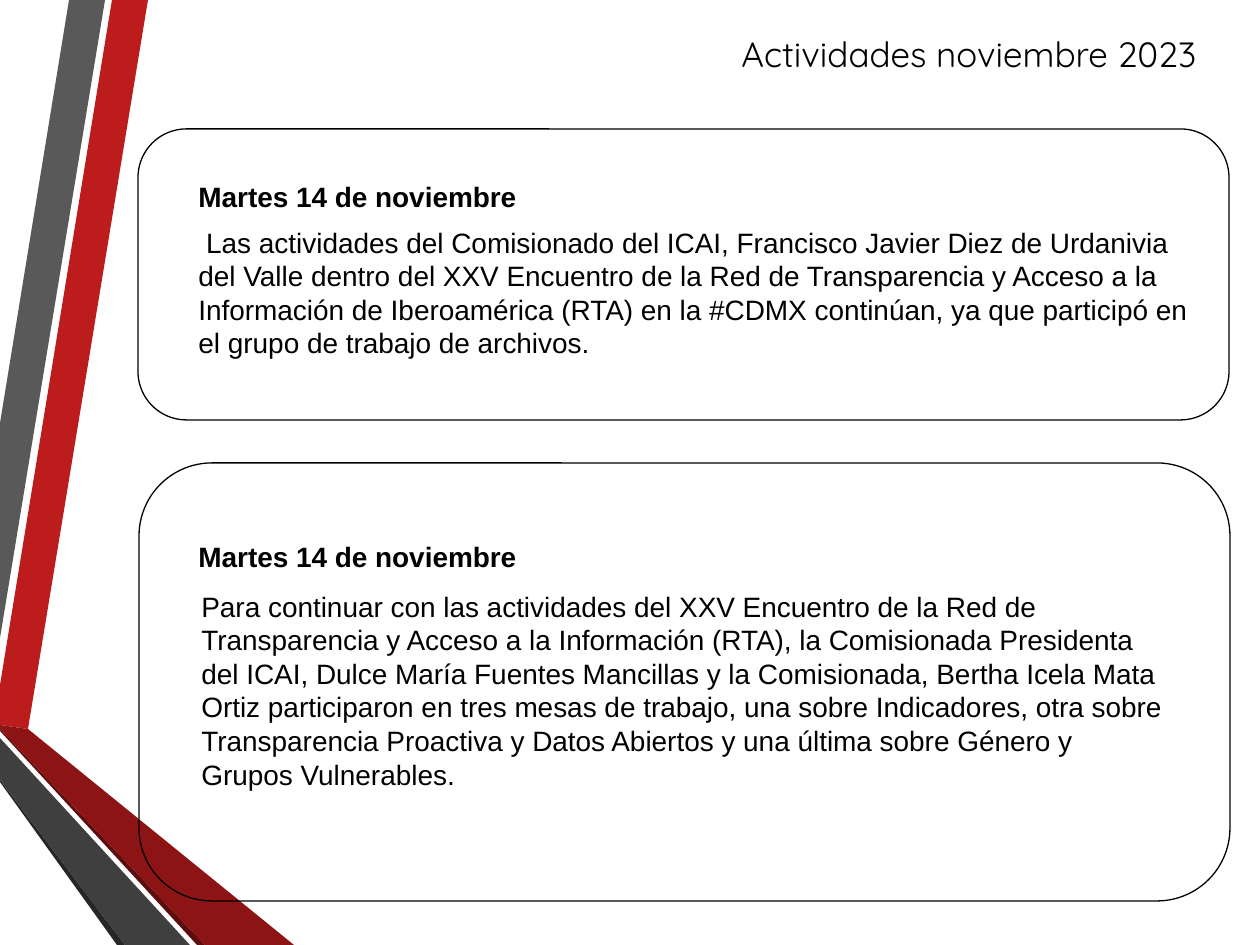
import pptx
import pptx.util
import pptx.dml.color
import pptx.enum.shapes
import pptx.enum.text

RGBColor = pptx.dml.color.RGBColor
BLACK = RGBColor(0x00, 0x00, 0x00)
RED = RGBColor(0xBC, 0x1C, 0x1C)
DARK_RED = RGBColor(0x8D, 0x14, 0x15)
MAROON = RGBColor(0x5E, 0x0D, 0x0E)
GREY = RGBColor(0x59, 0x59, 0x59)
DARK_GREY = RGBColor(0x3F, 0x3F, 0x3F)
CHARCOAL = RGBColor(0x26, 0x26, 0x26)

EMU_PER_PX = 914400 / 126

# Ribbon outlines, from back to front
RIBBONS = [
    (RED, [(0, 685), (0, 725), (28, 729), (148, 0), (112, 0)]),
    (GREY, [(105, 0), (69, 0), (0, 423), (0, 638)]),
    (CHARCOAL, [(0, 780), (0, 782), (117, 945), (125, 945)]),
    (MAROON, [(0, 729), (0, 731), (197, 945), (205, 945)]),
    (DARK_RED, [(0, 729), (205, 945), (294, 945), (28, 729), (0, 725)]),
    (DARK_GREY, [(0, 780), (125, 945), (190, 945), (0, 738)]),
]

TITLE_FORMAT = {"name": "Quicksand", "size": pptx.util.Pt(20)}
BODY_FORMAT = {"name": "Arial", "size": pptx.util.Pt(16)}
HEADING_FORMAT = {**BODY_FORMAT, "bold": True}

DATE = "Martes 14 de noviembre"
ARCHIVES = (
    " Las actividades del Comisionado del ICAI, Francisco Javier Diez de Urdanivia "
    "del Valle dentro del XXV Encuentro de la Red de Transparencia y Acceso a la "
    "Información de Iberoamérica (RTA) en la #CDMX continúan, ya que participó en "
    "el grupo de trabajo de archivos."
)
WORKSHOPS = (
    "Para continuar con las actividades del XXV Encuentro de la Red de "
    "Transparencia y Acceso a la Información (RTA), la Comisionada Presidenta "
    "del ICAI, Dulce María Fuentes Mancillas y la Comisionada, Bertha Icela Mata "
    "Ortiz participaron en tres mesas de trabajo, una sobre Indicadores, otra sobre "
    "Transparencia Proactiva y Datos Abiertos y una última sobre Género y "
    "Grupos Vulnerables."
)


def px(length):
    return pptx.util.Emu(round(length * EMU_PER_PX))


def add_ribbon(slide, color, points):
    builder = slide.shapes.build_freeform(*points[0], scale=EMU_PER_PX)
    builder.add_line_segments(points[1:], close=True)
    shape = builder.convert_to_shape()
    shape.shadow.inherit = False
    shape.fill.solid()
    shape.fill.fore_color.rgb = color
    shape.line.fill.background()


def add_frame(slide, box):
    kind = pptx.enum.shapes.MSO_SHAPE.FLOWCHART_ALTERNATE_PROCESS
    shape = slide.shapes.add_shape(kind, *map(px, box))
    shape.shadow.inherit = False
    shape.fill.background()
    shape.line.color.rgb = BLACK
    shape.line.width = pptx.util.Pt(0.75)


def add_text(slide, box, text, font_format, align=pptx.enum.text.PP_ALIGN.LEFT):
    frame = slide.shapes.add_textbox(*map(px, box)).text_frame
    frame.word_wrap = True
    paragraph = frame.paragraphs[0]
    paragraph.alignment = align
    run = paragraph.add_run()
    run.text = text
    for name, value in font_format.items():
        setattr(run.font, name, value)
    run.font.color.rgb = BLACK


def main():
    presentation = pptx.Presentation()
    presentation.slide_width = px(1260)
    presentation.slide_height = px(945)
    slide = presentation.slides.add_slide(presentation.slide_layouts[6])

    # Side decoration
    for color, points in RIBBONS:
        add_ribbon(slide, color, points)

    # Title
    add_text(slide, (709, 26, 520, 55), "Actividades noviembre 2023",
             TITLE_FORMAT, pptx.enum.text.PP_ALIGN.CENTER)

    # Activity on archives
    add_text(slide, (186, 173, 993, 47), DATE, HEADING_FORMAT)
    add_frame(slide, (138, 129, 1091, 291))
    add_text(slide, (186, 219, 1038, 149), ARCHIVES, BODY_FORMAT)

    # Activity on workshops
    add_text(slide, (186, 533, 993, 81), DATE, HEADING_FORMAT)
    add_frame(slide, (139, 463, 1091, 438))
    add_text(slide, (189, 583, 993, 217), WORKSHOPS, BODY_FORMAT)

    presentation.save("out.pptx")


if __name__ == "__main__":
    main()
